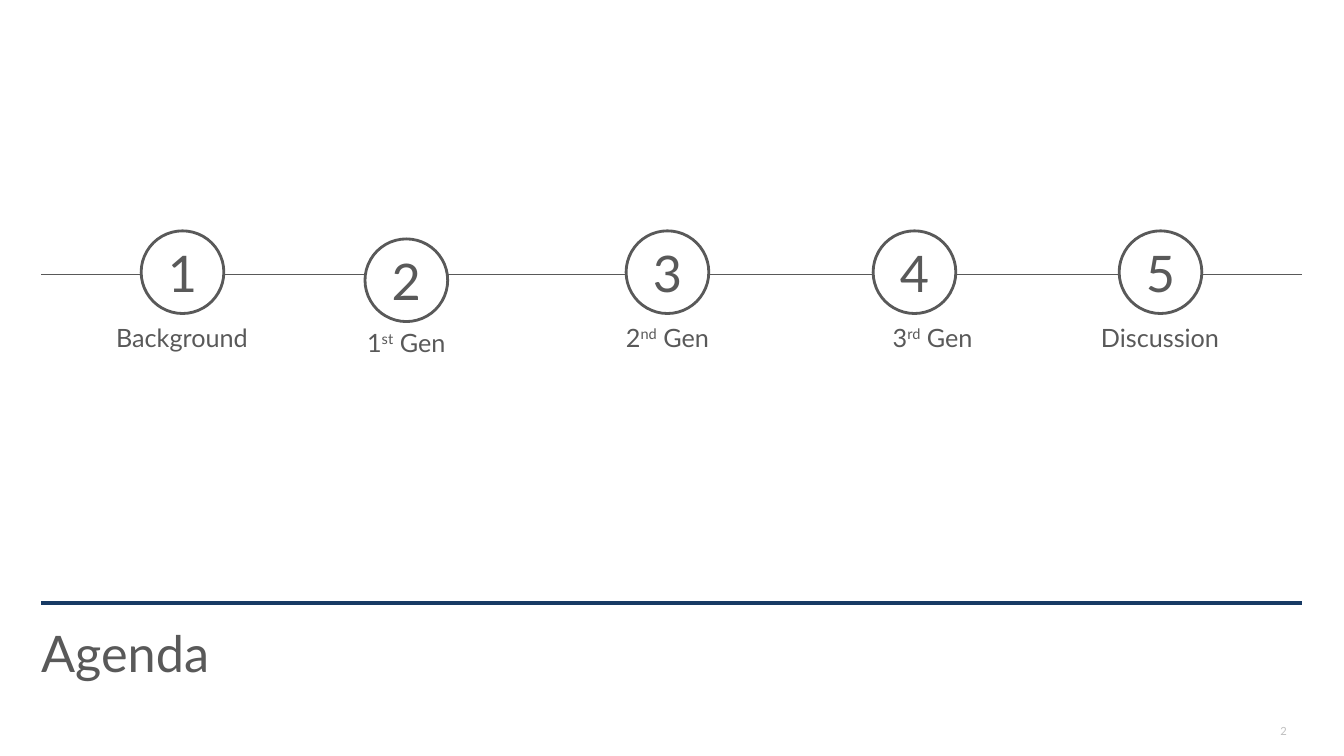
from lxml import etree
from pptx import Presentation
from pptx.dml.color import RGBColor
from pptx.enum.dml import MSO_LINE_DASH_STYLE as DASH
from pptx.enum.shapes import MSO_CONNECTOR_TYPE as CONNECTOR, MSO_SHAPE
from pptx.enum.text import MSO_ANCHOR, PP_ALIGN
from pptx.oxml.ns import qn
from pptx.util import Pt

GRAY = RGBColor(0x59, 0x59, 0x59)
LIGHT_GRAY = RGBColor(0xBF, 0xBF, 0xBF)
NAVY = RGBColor(0x17, 0x3A, 0x64)
WHITE = RGBColor(0xFF, 0xFF, 0xFF)
FONT = "Lato"
PX = 9144
CIRCLE = 82
LABEL_HEIGHT = 45
SUPERSCRIPT = "30000"

STEPS = [
    (140, 229, 90, 319, 181, ("Background",)),
    (362, 237, 295, 324, 216, ("1", "st", " Gen")),
    (621, 229, 554, 319, 216, ("2", "nd", " Gen")),
    (866, 229, 816, 319, 218, ("3", "rd", " Gen")),
    (1110, 229, 1060, 319, 181, ("Discussion",)),
]


def emu(*lengths):
    return [length * PX for length in lengths]


def set_format(target, values):
    for name, value in values.items():
        setattr(target, name, value)


def write_text(shape, parts, size, color=GRAY, frame=None, paragraph_format=None):
    text_frame = shape.text_frame
    set_format(text_frame, {"word_wrap": True, **(frame or {})})
    paragraph = text_frame.paragraphs[0]
    set_format(paragraph, paragraph_format or {})
    for index, part in enumerate(parts):
        run = paragraph.add_run()
        run.text = part
        set_format(run.font, {"name": FONT, "size": Pt(size)})
        run.font.color.rgb = color
        if index == 1:
            run.font._element.set("baseline", SUPERSCRIPT)


def add_rule(slide, left, top, width, color, weight, dash=None):
    rule = slide.shapes.add_connector(
        CONNECTOR.STRAIGHT, *emu(left, top, left + width, top))
    set_format(rule.line, {"width": Pt(weight), "dash_style": dash})
    rule.line.color.rgb = color
    etree.SubElement(rule._element.spPr, qn("a:effectLst"))


def add_step(slide, number, left, top, label_left, label_top, label_width, label):
    circle = slide.shapes.add_shape(
        MSO_SHAPE.OVAL, *emu(left, top, CIRCLE, CIRCLE))
    circle.shadow.inherit = False
    circle.fill.solid()
    circle.fill.fore_color.rgb = WHITE
    circle.line.color.rgb = GRAY
    circle.line.width = Pt(2)
    write_text(circle, [str(number)], 36,
               frame={"vertical_anchor": MSO_ANCHOR.MIDDLE},
               paragraph_format={"alignment": PP_ALIGN.CENTER})
    box = slide.shapes.add_textbox(
        *emu(label_left, label_top, label_width, LABEL_HEIGHT))
    write_text(box, label, 18, paragraph_format={
        "alignment": PP_ALIGN.CENTER, "line_spacing": 0.85})


def add_timeline(slide, left, top, width):
    add_rule(slide, left, top, width, GRAY, 0.1, DASH.SQUARE_DOT)
    for number, step in enumerate(STEPS, 1):
        add_step(slide, number, *step)


def add_footer(slide, left, top, width):
    add_rule(slide, left, top, width, NAVY, 3)
    title = slide.shapes.add_textbox(*emu(left - 10, top + 27, width, 57))
    write_text(title, ["Agenda"], 36,
               frame={"vertical_anchor": MSO_ANCHOR.MIDDLE},
               paragraph_format={"line_spacing": 0.75})
    page_number = slide.shapes.add_textbox(
        *emu(left + width - 31, top + 116, 32, 24))
    write_text(page_number, ["2"], 8, LIGHT_GRAY, frame={"word_wrap": False})


def main():
    presentation = Presentation()
    presentation.slide_width, presentation.slide_height = emu(1333, 750)
    slide = presentation.slides.add_slide(presentation.slide_layouts[6])
    add_timeline(slide, 41, 272, 1250)
    add_footer(slide, 41, 598, 1250)
    presentation.save("out.pptx")


if __name__ == "__main__":
    main()
